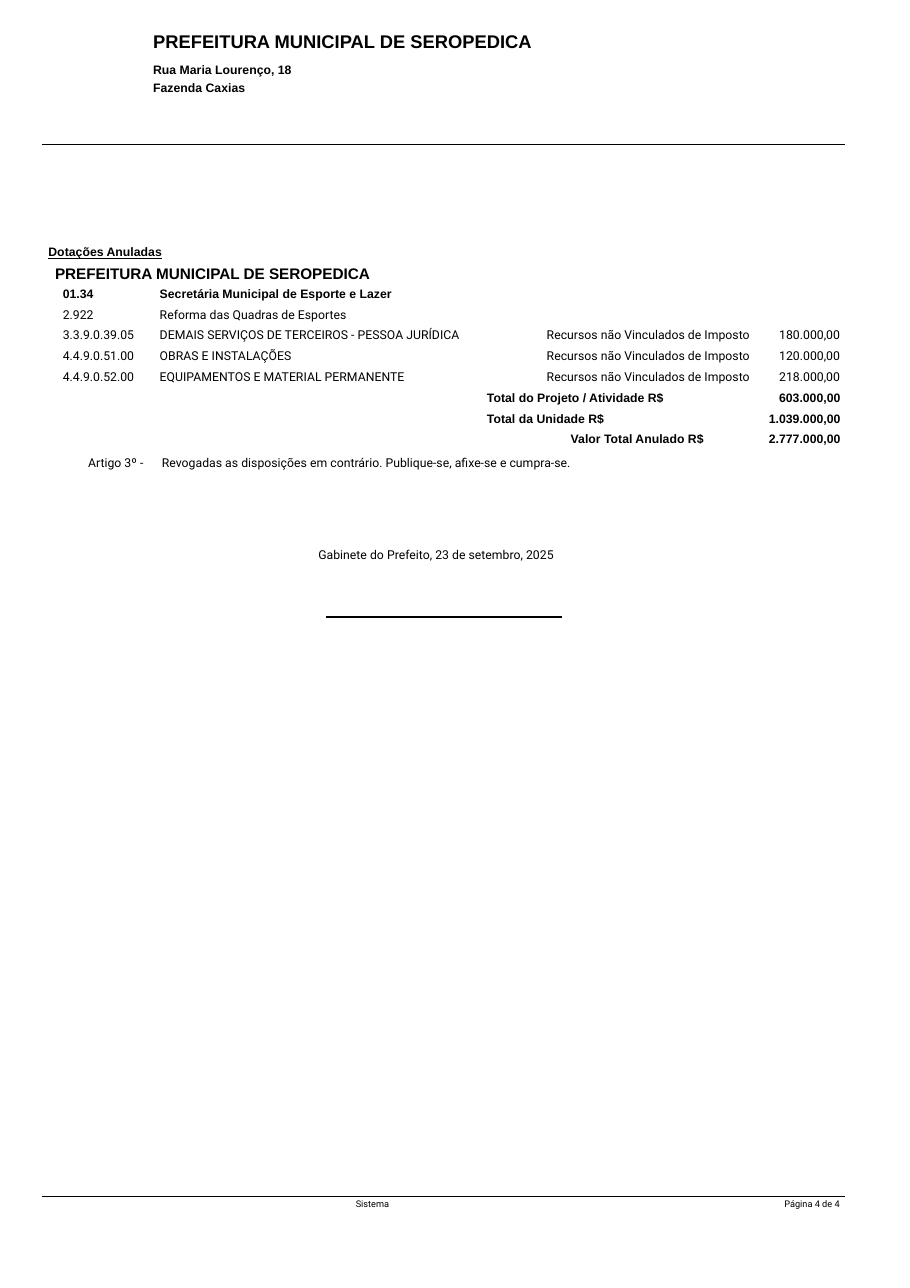
from dataclasses import dataclass
from typing import NamedTuple

from lxml.etree import SubElement
from pptx import Presentation
from pptx.dml.color import RGBColor
from pptx.enum.shapes import MSO_CONNECTOR as Connector
from pptx.enum.text import MSO_ANCHOR as Anchor, MSO_AUTO_SIZE as AutoSize, PP_ALIGN as Align
from pptx.oxml.ns import qn
from pptx.util import Inches, Pt


@dataclass(frozen=True)
class Theme:
    ink: RGBColor = RGBColor(0, 0, 0)
    strong_font: str = "Arial"
    plain_font: str = "Roboto"
    title: float = 12
    heading: float = 10
    body: float = 8
    footer: float = 6
    rule: float = 0.75


THEME = Theme()


class Line(NamedTuple):
    text: str
    size: float = THEME.body
    strong: bool = False
    underline: bool = False
    indent: float = 0.01
    before: float = 0
    spacing: float = 1.0


class Block(NamedTuple):
    left: float
    top: float
    width: float
    height: float
    lines: list[Line]
    inset: float = 0.01


class Rule(NamedTuple):
    left: float
    top: float
    width: float


class Column(NamedTuple):
    width: float
    align: Align = Align.LEFT
    pad_left: float = 0
    pad_right: float = 0


class Row(NamedTuple):
    height: float
    inset: float
    cells: list[str]
    strong: bool = False


# Content
LETTERHEAD = Block(1.38, 0.26, 3.6, 0.62, [
    Line("PREFEITURA MUNICIPAL DE SEROPEDICA", THEME.title, strong=True),
    Line("Rua Maria Lourenço, 18", strong=True, before=4.5, spacing=1.25),
    Line("Fazenda Caxias", strong=True, spacing=1.25),
])
BLOCKS = [
    Block(0.43, 2.17, 3.1, 0.41, [
        Line("Dotações Anuladas", strong=True, underline=True),
        Line("PREFEITURA MUNICIPAL DE SEROPEDICA", THEME.heading, strong=True,
             indent=0.07, before=3.4),
    ], inset=0.05),
    Block(0.79, 4.12, 0.6, 0.16, [Line("Artigo 3º -")]),
    Block(1.46, 4.12, 3.9, 0.16, [
        Line("Revogadas as disposições em contrário. Publique-se, afixe-se e cumpra-se.")]),
    Block(2.88, 4.96, 2.4, 0.16, [Line("Gabinete do Prefeito, 23 de setembro, 2025")]),
    Block(3.22, 10.87, 0.4, 0.12, [Line("Sistema", THEME.footer)]),
    Block(7.11, 10.87, 0.6, 0.12, [Line("Página 4 de 4", THEME.footer)]),
]
RULES = [Rule(0.38, 1.31, 7.29), Rule(2.96, 5.6, 2.14), Rule(0.38, 10.86, 7.29)]

FUNDING = "Recursos não Vinculados de Imposto"
ALLOCATION_COLUMNS = [
    Column(0.8, pad_left=0.03),
    Column(3.37, pad_left=0.11),
    Column(2.23, Align.RIGHT, pad_right=0.13),
    Column(0.72, Align.CENTER, pad_left=0.1),
]
ALLOCATIONS = [
    Row(0.16, 0, ["01.34", "Secretária Municipal de Esporte e Lazer", "", ""], strong=True),
    Row(0.19, 0.03, ["2.922", "Reforma das Quadras de Esportes", "", ""]),
    Row(0.19, 0.02, ["3.3.9.0.39.05", "DEMAIS SERVIÇOS DE TERCEIROS - PESSOA JURÍDICA",
                     FUNDING, "180.000,00"]),
    Row(0.19, 0.02, ["4.4.9.0.51.00", "OBRAS E INSTALAÇÕES", FUNDING, "120.000,00"]),
    Row(0.16, 0.02, ["4.4.9.0.52.00", "EQUIPAMENTOS E MATERIAL PERMANENTE",
                     FUNDING, "218.000,00"]),
]
TOTAL_COLUMNS = [Column(2.3, pad_left=0.03), Column(0.97, Align.RIGHT, pad_right=0.03)]
TOTALS = [
    Row(0.16, 0, ["Total do Projeto / Atividade R$", "603.000,00"], strong=True),
    Row(0.19, 0.03, ["Total da Unidade R$", "1.039.000,00"], strong=True),
    Row(0.15, 0.02, ["Valor Total Anulado R$", "2.777.000,00"], strong=True),
]
GRAND_TOTAL_INDENT = 0.79


def style_font(font, size: float, strong: bool) -> None:
    font.name = THEME.strong_font if strong else THEME.plain_font
    font.size = Pt(size)
    font.bold = strong
    font.color.rgb = THEME.ink


def fill_block(shape, block: Block) -> None:
    shape.left, shape.top, shape.width, shape.height = (Inches(v) for v in block[:4])
    frame = shape.text_frame
    frame.word_wrap = True
    frame.auto_size = AutoSize.NONE
    frame.vertical_anchor = Anchor.TOP
    frame.margin_left = frame.margin_right = frame.margin_bottom = 0
    frame.margin_top = Inches(block.inset)
    for index, line in enumerate(block.lines):
        paragraph = frame.add_paragraph() if index else frame.paragraphs[0]
        paragraph.text = line.text
        paragraph.alignment = Align.LEFT
        paragraph.space_before = Pt(line.before)
        paragraph.line_spacing = line.spacing
        paragraph._p.get_or_add_pPr().set("marL", str(Inches(line.indent)))
        style_font(paragraph.font, line.size, line.strong)
        paragraph.font.underline = line.underline


def draw_rule(slide, rule: Rule) -> None:
    left, top, width = (Inches(v) for v in rule)
    connector = slide.shapes.add_connector(Connector.STRAIGHT, left, top, left + width, top)
    connector.line.color.rgb = THEME.ink
    connector.line.width = Pt(THEME.rule)
    SubElement(connector._element.spPr, qn("a:effectLst"))


def draw_table(slide, left: float, top: float, columns: list[Column], rows: list[Row]):
    width = sum(column.width for column in columns)
    height = sum(row.height for row in rows)
    table = slide.shapes.add_table(len(rows), len(columns), Inches(left), Inches(top),
                                   Inches(width), Inches(height)).table
    table.first_row = table.horz_banding = False
    for c, column in enumerate(columns):
        table.columns[c].width = Inches(column.width)
    for r, row in enumerate(rows):
        table.rows[r].height = Inches(row.height)
        for c, (column, text) in enumerate(zip(columns, row.cells)):
            cell = table.cell(r, c)
            cell.fill.background()
            cell.margin_left = Inches(column.pad_left)
            cell.margin_right = Inches(column.pad_right)
            cell.margin_top, cell.margin_bottom = Inches(row.inset), 0
            paragraph = cell.text_frame.paragraphs[0]
            if text:
                paragraph.text = text
            paragraph.alignment = column.align
            style_font(paragraph.font, THEME.body, row.strong)
    return table


def main() -> None:
    deck = Presentation()
    deck.slide_width, deck.slide_height = Inches(8.26), Inches(11.69)
    slide = deck.slides.add_slide(deck.slide_layouts[5])

    # Letterhead, text and rules
    fill_block(slide.shapes.title, LETTERHEAD)
    for block in BLOCKS:
        fill_block(slide.shapes.add_textbox(0, 0, 0, 0), block)
    for rule in RULES:
        draw_rule(slide, rule)

    # Cancelled allocations
    allocations = draw_table(slide, 0.54, 2.61, ALLOCATION_COLUMNS, ALLOCATIONS)
    allocations.cell(0, 2).merge(allocations.cell(1, 3))

    # Totals
    totals = draw_table(slide, 4.39, 3.55, TOTAL_COLUMNS, TOTALS)
    totals.cell(2, 0).margin_left = Inches(GRAND_TOTAL_INDENT)

    deck.save("out.pptx")


if __name__ == "__main__":
    main()
